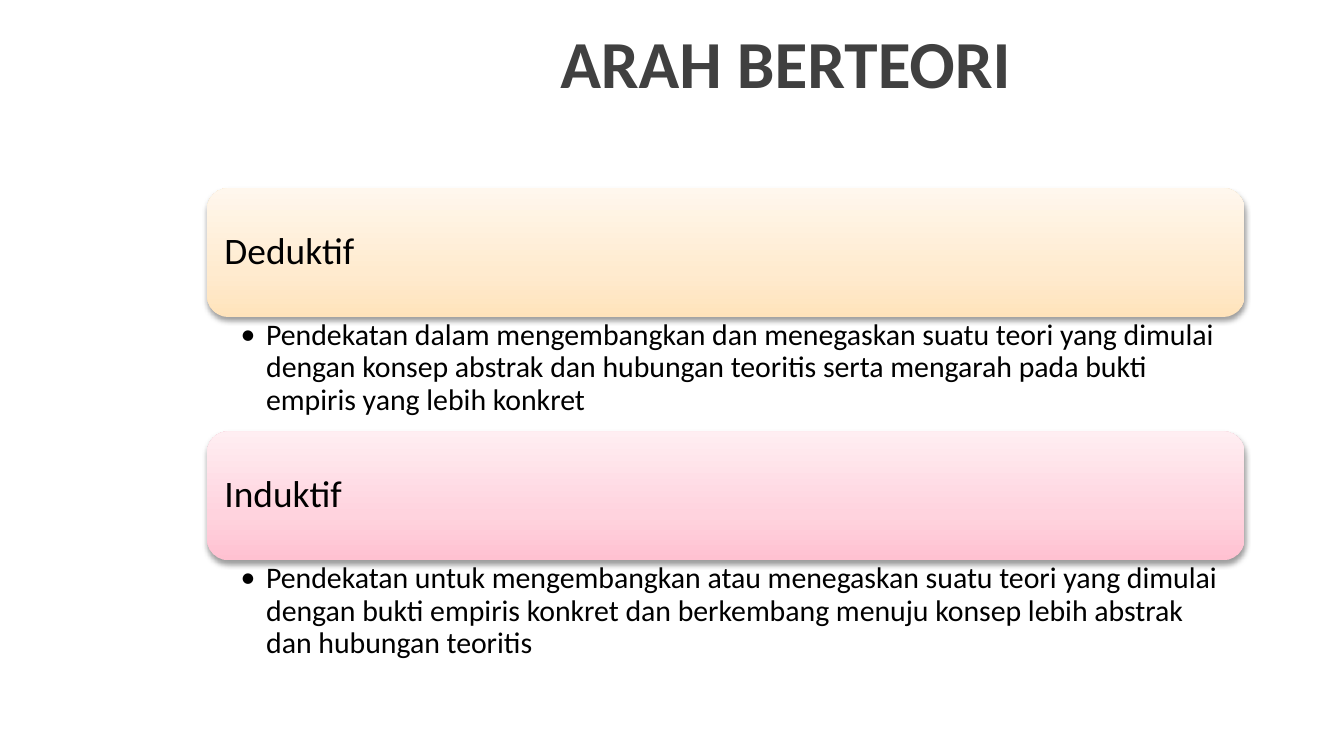
from dataclasses import dataclass

from lxml.etree import SubElement
from pptx import Presentation
from pptx.dml.color import RGBColor
from pptx.enum.shapes import MSO_SHAPE
from pptx.enum.text import MSO_ANCHOR, PP_ALIGN
from pptx.oxml.ns import qn
from pptx.shapes.autoshape import Shape
from pptx.slide import Slide
from pptx.text.text import TextFrame, _Paragraph
from pptx.util import Inches, Pt


@dataclass(frozen=True)
class Theme:
    font: str = "Calibri"
    title_color: str = "404040"
    text_color: str = "000000"
    shadow_color: str = "000000"
    title_size: int = 36
    heading_size: int = 20
    body_size: int = 16


@dataclass(frozen=True)
class Approach:
    heading: str
    description: str
    gradient: tuple[str, str, str]  # from bottom to top


THEME = Theme()
SLIDE_WIDTH = Inches(10)
SLIDE_HEIGHT = SLIDE_WIDTH * 9 // 16
GRADIENT_POSITIONS = (0, 35, 100)
LEFT, TOP, WIDTH = 1.54, 1.4, 7.72
BANNER_HEIGHT, DESCRIPTION_HEIGHT = 0.96, 0.85
BANNER_INSET = 0.05

APPROACHES = (
    Approach(
        "Deduktif",
        "Pendekatan dalam mengembangkan dan menegaskan suatu teori yang dimulai "
        "dengan konsep abstrak dan hubungan teoritis serta mengarah pada bukti "
        "empiris yang lebih konkret",
        ("FFE3BB", "FFEBCF", "FFF7ED"),
    ),
    Approach(
        "Induktif",
        "Pendekatan untuk mengembangkan atau menegaskan suatu teori yang dimulai "
        "dengan bukti empiris konkret dan berkembang menuju konsep lebih abstrak "
        "dan hubungan teoritis",
        ("FFC1D1", "FFD3DE", "FFEEF2"),
    ),
)


def add_text_frame(
    slide: Slide, left: float, top: float, width: float, height: float,
    margins: tuple[float, float, float, float] = (0.1, 0.05, 0.1, 0.05),
    anchor: MSO_ANCHOR = MSO_ANCHOR.MIDDLE,
) -> TextFrame:
    """Add a wrapping text box; margins run left, top, right, bottom."""
    frame = slide.shapes.add_textbox(
        Inches(left), Inches(top), Inches(width), Inches(height)
    ).text_frame
    frame.word_wrap = True
    frame.vertical_anchor = anchor
    frame.margin_left, frame.margin_top, frame.margin_right, frame.margin_bottom = map(
        Inches, margins
    )
    return frame


def write(frame: TextFrame, text: str, size: int, color: str, bold: bool = False) -> _Paragraph:
    """Fill the frame with one styled paragraph and return it."""
    frame.text = text
    paragraph = frame.paragraphs[0]
    font = paragraph.runs[0].font
    font.name, font.size, font.bold = THEME.font, Pt(size), bold
    font.color.rgb = RGBColor.from_string(color)
    return paragraph


def fill_gradient(shape: Shape, colors: tuple[str, ...]) -> None:
    shape.fill.gradient()
    shape.fill.gradient_angle = 90
    stops = shape._element.spPr.find(f"{qn('a:gradFill')}/{qn('a:gsLst')}")
    for stop in list(stops):
        stops.remove(stop)
    for position, color in zip(GRADIENT_POSITIONS, colors):
        stop = SubElement(stops, qn("a:gs"), pos=str(position * 1000))
        SubElement(stop, qn("a:srgbClr"), val=color)


def add_soft_shadow(shape: Shape) -> None:
    shape.shadow.inherit = False
    effects = shape._element.spPr.find(qn("a:effectLst"))
    shadow = SubElement(
        effects, qn("a:outerShdw"), blurRad=str(Pt(3.1)), dist=str(Pt(1.6)),
        dir="5400000", rotWithShape="0",
    )
    color = SubElement(shadow, qn("a:srgbClr"), val=THEME.shadow_color)
    SubElement(color, qn("a:alpha"), val="38000")


def add_bullet(paragraph: _Paragraph) -> None:
    paragraph.level = 1
    properties = paragraph._p.get_or_add_pPr()
    properties.set("marL", str(Inches(0.19)))
    properties.set("indent", str(Inches(-0.19)))
    SubElement(properties, qn("a:buFont"), typeface=THEME.font)
    SubElement(properties, qn("a:buChar"), char="•")


def add_title(slide: Slide, text: str) -> None:
    frame = add_text_frame(slide, 1.69, 0.03, 8.31, 0.85)
    title = write(frame, text, THEME.title_size, THEME.title_color, bold=True)
    title.alignment = PP_ALIGN.CENTER


def add_approach(slide: Slide, approach: Approach, top: float) -> None:
    banner = slide.shapes.add_shape(
        MSO_SHAPE.ROUNDED_RECTANGLE,
        Inches(LEFT), Inches(top), Inches(WIDTH), Inches(BANNER_HEIGHT),
    )
    fill_gradient(banner, approach.gradient)
    banner.line.fill.background()
    add_soft_shadow(banner)

    heading_frame = add_text_frame(
        slide, LEFT + BANNER_INSET, top + BANNER_INSET,
        WIDTH - 2 * BANNER_INSET, BANNER_HEIGHT - 2 * BANNER_INSET,
        margins=(0.08, 0.08, 0.08, 0.08),
    )
    heading = write(heading_frame, approach.heading, THEME.heading_size, THEME.text_color)
    heading.line_spacing = 0.9

    description_frame = add_text_frame(
        slide, LEFT, top + BANNER_HEIGHT, WIDTH, DESCRIPTION_HEIGHT,
        margins=(0.25, 0.02, 0.12, 0.02), anchor=MSO_ANCHOR.TOP,
    )
    description = write(
        description_frame, approach.description, THEME.body_size, THEME.text_color
    )
    description.line_spacing = 0.9
    add_bullet(description)


def main() -> None:
    presentation = Presentation()
    presentation.slide_width, presentation.slide_height = SLIDE_WIDTH, SLIDE_HEIGHT
    slide = presentation.slides.add_slide(presentation.slide_layouts[6])
    add_title(slide, "ARAH BERTEORI")
    for index, approach in enumerate(APPROACHES):
        add_approach(slide, approach, TOP + index * (BANNER_HEIGHT + DESCRIPTION_HEIGHT))
    presentation.save("out.pptx")


if __name__ == "__main__":
    main()
